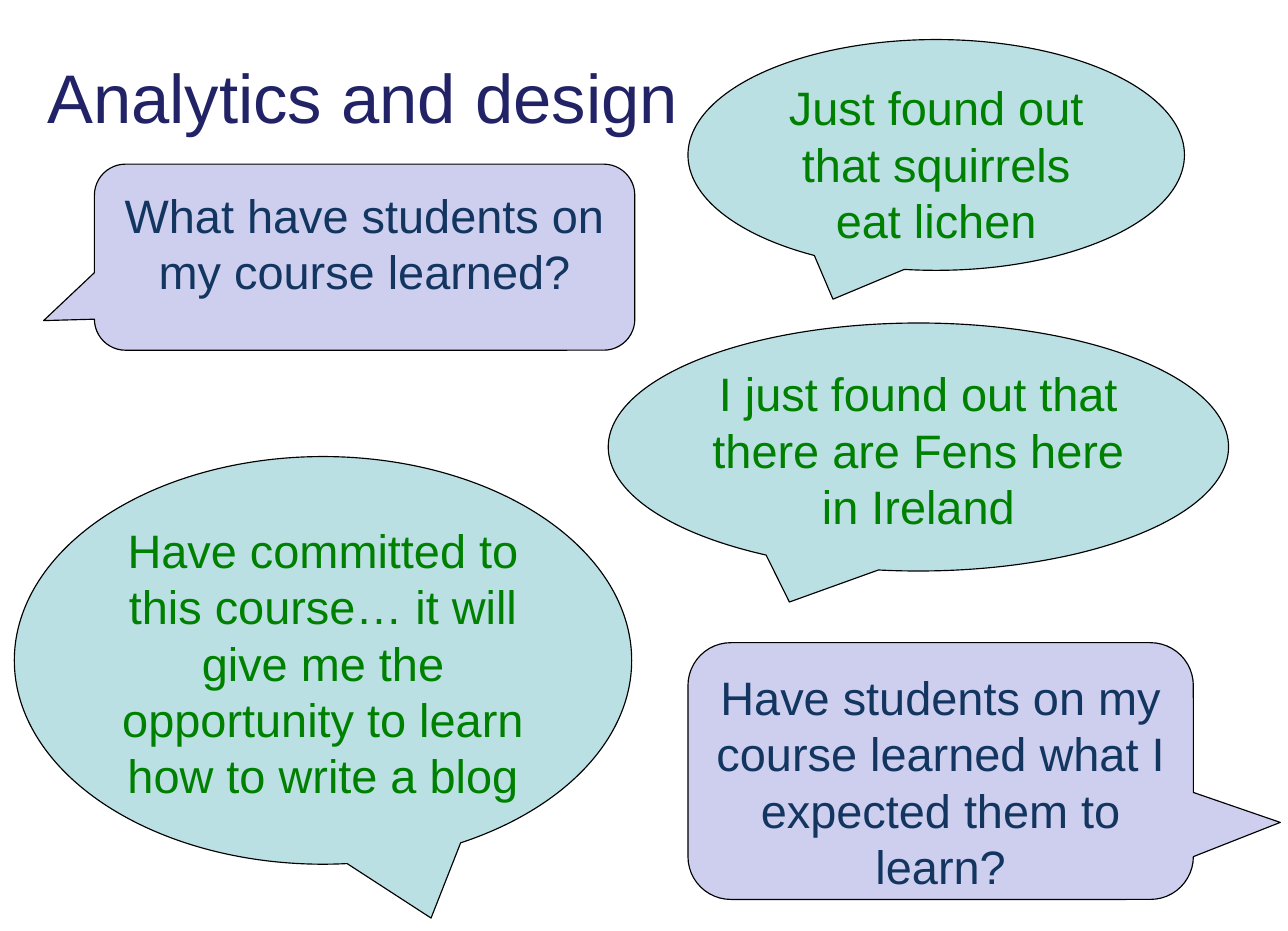
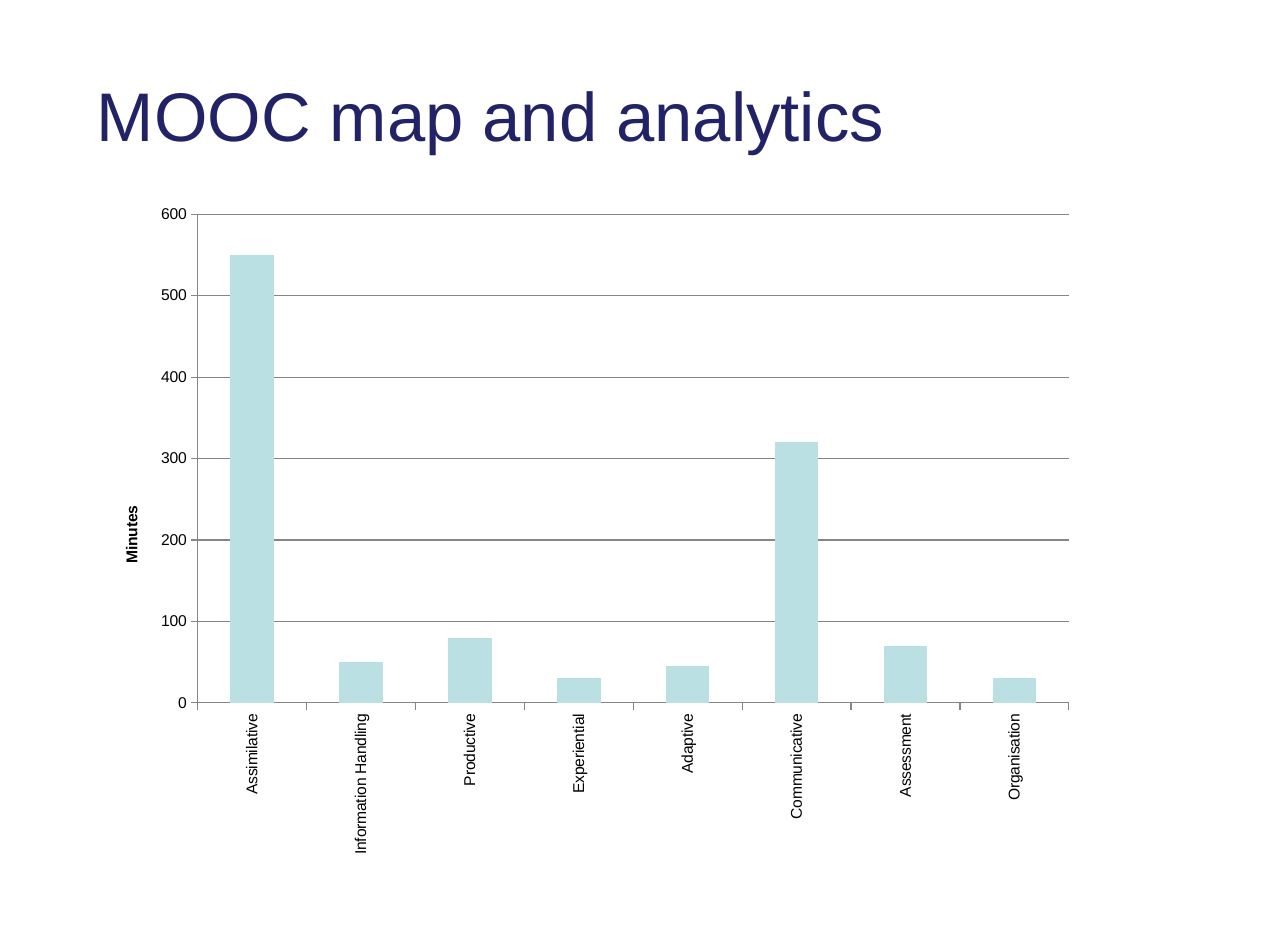
from lxml.etree import fromstring
from pptx import Presentation
from pptx.chart.data import CategoryChartData
from pptx.dml.color import RGBColor
from pptx.enum.chart import XL_CHART_TYPE, XL_TICK_MARK
from pptx.enum.shapes import MSO_SHAPE
from pptx.enum.text import MSO_ANCHOR, MSO_AUTO_SIZE, PP_ALIGN
from pptx.oxml.ns import nsdecls
from pptx.util import Pt

INK = {"title": "222267", "query": "133660", "reply": "008000", "lilac": "CECEEF",
       "aqua": "BBE0E3", "black": "000000", "grey": "868686"}
FACE = "Arial"
FRAME = {"word_wrap": True, "auto_size": MSO_AUTO_SIZE.NONE}
KINDS = {
    "query": {"shape": MSO_SHAPE.ROUNDED_RECTANGULAR_CALLOUT, "fill": "lilac",
              "frame": {"margin_top": Pt(8.64), "margin_bottom": Pt(8.64)}},
    "reply": {"shape": MSO_SHAPE.OVAL_CALLOUT, "fill": "aqua", "frame": {}},
}
BUBBLES = [
    ("query", (60.4, 105, 345.6, 119), (-0.594, 0.341, 0.167),
     "What have students on my course learned?"),
    ("query", (440, 411, 323.2, 164.2), (0.672, 0.2, 0.167),
     "Have students on my course learned what I expected them to learn?"),
    ("reply", (389, 206.6, 396.7, 158.6), (-0.208, 0.625),
     "I just found out that there are Fens here in Ireland"),
    ("reply", (440, 25.3, 317.5, 147.6), (-0.208, 0.625),
     "Just found out that squirrels eat lichen"),
    ("reply", (9.2, 292, 394.8, 260.7), (0.175, 0.632),
     "Have committed to this course… it will give me the opportunity to learn how to write a blog"),
]
MINUTES = {"Assimilative": 550, "Information Handling": 50, "Productive": 80,
           "Experiential": 30, "Adaptive": 45, "Communicative": 320,
           "Assessment": 70, "Organisation": 30}


def tint(name):
    """Return the named colour."""
    return RGBColor.from_string(INK[name])


def apply(item, values):
    """Set each named attribute of an object."""
    for name, value in values.items():
        setattr(item, name, value)


def style(font, size, ink, bold=False):
    """Format a font."""
    apply(font, {"name": FACE, "size": Pt(size), "bold": bold})
    font.color.rgb = tint(ink)


def stroke(line, ink):
    """Draw a thin line in the named colour."""
    line.color.rgb = tint(ink)
    line.width = Pt(0.75)


def write(shape, text, size, ink, align, anchor, extra):
    """Put one formatted paragraph in a shape."""
    frame = shape.text_frame
    frame.text = text
    apply(frame, {**FRAME, "vertical_anchor": anchor, **extra})
    para = frame.paragraphs[0]
    para.alignment = align
    style(para.runs[0].font, size, ink)


def start(deck, text, box):
    """Add a slide with its title in the given box."""
    slide = deck.slides.add_slide(deck.slide_layouts[5])
    title = slide.shapes.title
    apply(title, dict(zip(("left", "top", "width", "height"), map(Pt, box))))
    write(title, text, 44, "title", PP_ALIGN.LEFT, MSO_ANCHOR.MIDDLE, {})
    return slide


def bubble(slide, kind, box, tail, text):
    """Add one speech bubble in the given box."""
    look = KINDS[kind]
    shape = slide.shapes.add_shape(look["shape"], *map(Pt, box))
    for spot, value in enumerate(tail):
        shape.adjustments[spot] = value
    shape.shadow.inherit = False
    shape.fill.solid()
    shape.fill.fore_color.rgb = tint(look["fill"])
    stroke(shape.line, "black")
    write(shape, text, 30, kind, PP_ALIGN.CENTER, MSO_ANCHOR.TOP, look["frame"])


def layout(inner=False, **spots):
    """Return a manual chart layout from fractions of the chart."""
    target = '<c:layoutTarget val="inner"/>' if inner else ""
    modes = "".join(f'<c:{key}Mode val="edge"/>' for key in "xy")
    sizes = "".join(f'<c:{key} val="{value}"/>' for key, value in spots.items())
    return fromstring(f'<c:layout {nsdecls("c")}><c:manualLayout>{target}{modes}{sizes}'
                      '</c:manualLayout></c:layout>')


def place(part, node):
    """Swap a chart part's layout for the given one."""
    for old in part.findall(node.tag):
        part.remove(old)
    text = part.find(node.tag.replace("layout", "tx"))
    part.insert(0 if text is None else 1, node)


def columns(slide, box):
    """Add the column chart of minutes in the given box."""
    data = CategoryChartData()
    data.categories = list(MINUTES)
    data.add_series("Series 1", list(MINUTES.values()))
    chart = slide.shapes.add_chart(XL_CHART_TYPE.COLUMN_CLUSTERED, *map(Pt, box), data).chart
    apply(chart, {"has_legend": False, "has_title": False})
    style(chart.font, 10, "black")
    plot = chart.plots[0]
    apply(plot, {"gap_width": 150, "vary_by_categories": False})
    fill = plot.series[0].format.fill
    fill.solid()
    fill.fore_color.rgb = tint("aqua")
    cats, vals = chart.category_axis, chart.value_axis
    for axis in (cats, vals):
        apply(axis, {"major_tick_mark": XL_TICK_MARK.OUTSIDE,
                     "minor_tick_mark": XL_TICK_MARK.NONE})
        stroke(axis.format.line, "grey")
        style(axis.tick_labels.font, 10, "black")
    cats.has_major_gridlines = False
    cats._element.txPr.bodyPr.set("rot", "-5400000")
    apply(vals, {"minimum_scale": 0, "maximum_scale": 600, "major_unit": 100})
    stroke(vals.major_gridlines.format.line, "grey")
    frame = vals.axis_title.text_frame
    frame.text = "Minutes"
    style(frame.paragraphs[0].runs[0].font, 10, "black", True)
    frame._txBody.bodyPr.set("rot", "-5400000")
    place(vals.axis_title._element, layout(x=0.03, y=0.43))
    place(chart._chartSpace.chart.plotArea, layout(True, x=0.102, y=0.033, w=0.793, h=0.672))


def main():
    """Build and save both slides."""
    deck = Presentation()
    apply(deck, {"slide_width": Pt(823.7), "slide_height": Pt(595.4)})
    talk = start(deck, "Analytics and design", (23, 31.7, 660, 59.8))
    for item in BUBBLES:
        bubble(talk, *item)
    graph = start(deck, "MOOC map and analytics", (54.7, 42.5, 660, 60.5))
    columns(graph, (54.7, 121.7, 702.7, 465.1))
    deck.save("out.pptx")


if __name__ == "__main__":
    main()
